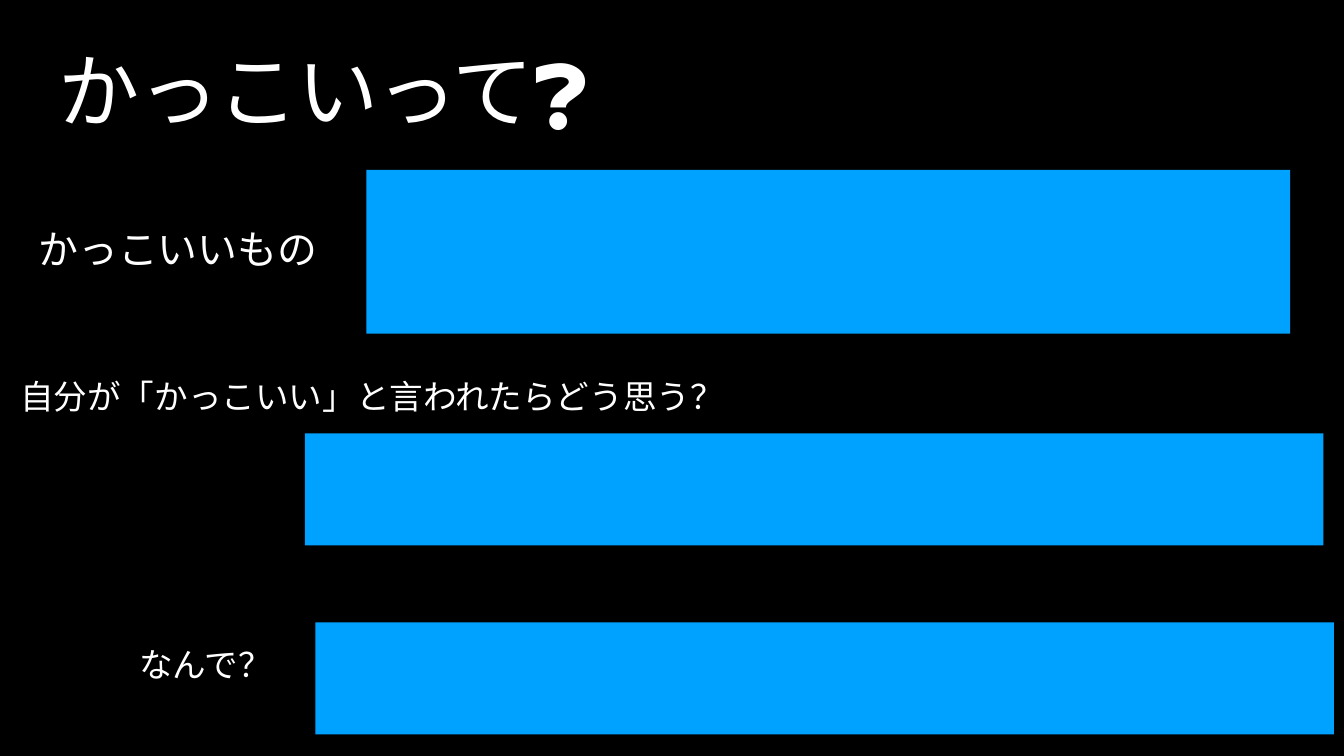
from lxml.etree import SubElement
from pptx import Presentation
from pptx.dml.color import RGBColor
from pptx.enum.shapes import MSO_SHAPE as Shape
from pptx.enum.text import MSO_ANCHOR as Anchor, MSO_AUTO_SIZE as AutoSize, PP_ALIGN as Align
from pptx.oxml.ns import qn
from pptx.util import Pt

PX = 9144
BLACK = RGBColor(0x00, 0x00, 0x00)
WHITE = RGBColor(0xFF, 0xFF, 0xFF)
BLUE = RGBColor(0x00, 0xA2, 0xFF)
FONT = "Noto Sans CJK JP"
INSET = 6

QUESTIONS = [
    ("かっこいいもの", 57, (70, 454, 567, 91), (727, 337, 1833, 325)),
    ("自分が「かっこいい」と言われたらどう思う？", 48, (34, 735, 1413, 111), (605, 860, 2021, 222)),
    ("なんで？", 48, (270, 1284, 275, 78), (626, 1235, 2021, 222)),
]


def emu(box):
    """Turn a box in px into EMU lengths."""
    return [length * PX for length in box]


def write_text(shape, text, size, line_spacing):
    """Write one white, left-aligned line in a shape and return its run."""
    frame = shape.text_frame
    frame.vertical_anchor = Anchor.MIDDLE
    frame.margin_left = frame.margin_right = INSET * PX
    frame.margin_top = frame.margin_bottom = INSET * PX
    paragraph = frame.paragraphs[0]
    paragraph.alignment = Align.LEFT
    paragraph.line_spacing = line_spacing
    run = paragraph.add_run()
    run.text = text
    run.font.size = Pt(size)
    run.font.color.rgb = WHITE
    run.font.name = FONT
    SubElement(run._r.get_or_add_rPr(), qn("a:ea"), typeface=FONT)
    return run


def add_title(slide, text, box):
    """Place the heading in the title placeholder."""
    title = slide.shapes.title
    title.left, title.top, title.width, title.height = emu(box)
    run = write_text(title, text, 116, 0.8)
    run._r.get_or_add_rPr().set("spc", "-230")
    title.text_frame.word_wrap = True
    title.text_frame.auto_size = AutoSize.NONE


def add_question(slide, text, size, label_box, answer_box):
    """Place a question label and the blue panel for its answer."""
    label = slide.shapes.add_textbox(*emu(label_box))
    write_text(label, text, size, 0.9)
    label.text_frame.paragraphs[0].space_before = Pt(45)
    label.text_frame.word_wrap = False
    label.text_frame.auto_size = AutoSize.SHAPE_TO_FIT_TEXT

    panel = slide.shapes.add_shape(Shape.RECTANGLE, *emu(answer_box))
    panel.shadow.inherit = False
    panel.fill.solid()
    panel.fill.fore_color.rgb = BLUE
    panel.line.fill.background()


def main():
    """Build the slide and save it."""
    presentation = Presentation()
    presentation.slide_width, presentation.slide_height = emu((2667, 1500))
    slide = presentation.slides.add_slide(presentation.slide_layouts[5])
    slide.background.fill.solid()
    slide.background.fill.fore_color.rgb = BLACK
    add_title(slide, "かっこいって❓", (110, 37, 2403, 315))
    for question in QUESTIONS:
        add_question(slide, *question)
    presentation.save("out.pptx")


if __name__ == "__main__":
    main()
